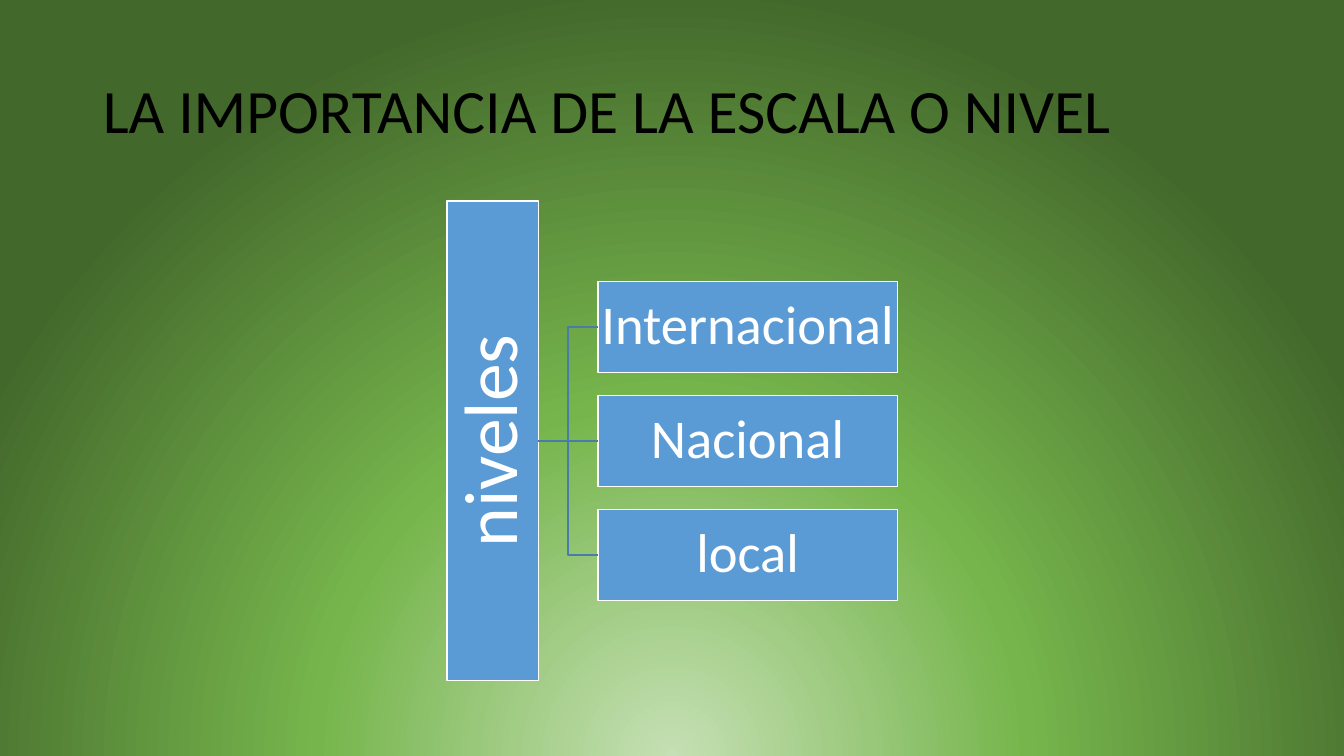
import pptx
import pptx.dml.color
import pptx.enum.shapes
import pptx.enum.text
import pptx.oxml
import pptx.oxml.ns
import pptx.util
from pptx.util import Inches

TITLE = "LA IMPORTANCIA DE LA ESCALA O NIVEL"
ROOT = "niveles"
LEVELS = ["Internacional", "Nacional", "local"]

FONT = "Calibri"
BOX_FILL, BOX_LINE, LINK = "5B9BD5", "FFFFFF", "497CAB"
GRADIENT = [(0, "C5E0B4"), (46, "76B54C"), (100, "43682B")]

CENTER_Y = 4.375
ROOT_LEFT, ROOT_HEIGHT = 4.435, 4.76
LEVEL_LEFT, LEVEL_WIDTH = 5.93, 2.97
THICKNESS, PITCH = 0.905, 1.13


def color(value):
    return pptx.dml.color.RGBColor.from_string(value)


def write(paragraph, text, size, text_color):
    paragraph.line_spacing = 0.9
    run = paragraph.add_run()
    run.text = text
    run.font.name = FONT
    run.font.size = pptx.util.Pt(size)
    run.font.color.rgb = color(text_color)


def paint_background(slide):
    """Fill the background with a radial gradient centred below the slide."""
    slide.background.fill.gradient()
    linear = slide.element.find(".//" + pptx.oxml.ns.qn("a:gradFill"))
    stops = "".join(
        f'<a:gs pos="{percent * 1000}"><a:srgbClr val="{value}"/></a:gs>'
        for percent, value in GRADIENT
    )
    radial = pptx.oxml.parse_xml(
        f'<a:gradFill {pptx.oxml.ns.nsdecls("a")} rotWithShape="1">'
        f'<a:gsLst>{stops}</a:gsLst><a:path path="circle">'
        '<a:fillToRect l="50000" t="130000" r="50000" b="-30000"/>'
        '</a:path></a:gradFill>'
    )
    linear.getparent().replace(linear, radial)


def add_box(slide, text, left, width, height, middle, size, inset):
    box = slide.shapes.add_shape(
        pptx.enum.shapes.MSO_SHAPE.RECTANGLE,
        Inches(left), Inches(middle - height / 2), Inches(width), Inches(height))
    box.shadow.inherit = False
    box.fill.solid()
    box.fill.fore_color.rgb = color(BOX_FILL)
    box.line.color.rgb = color(BOX_LINE)
    box.line.width = pptx.util.Pt(1)
    frame = box.text_frame
    frame.word_wrap = True
    frame.vertical_anchor = pptx.enum.text.MSO_ANCHOR.MIDDLE
    frame.margin_left = frame.margin_right = Inches(inset)
    frame.margin_top = frame.margin_bottom = Inches(inset)
    paragraph = frame.paragraphs[0]
    paragraph.alignment = pptx.enum.text.PP_ALIGN.CENTER
    write(paragraph, text, size, "FFFFFF")
    return box


def link(slide, root, level, kind):
    connector = slide.shapes.add_connector(kind, 0, 0, 0, 0)
    connector.begin_connect(root, 3)
    connector.end_connect(level, 1)
    connector.line.color.rgb = color(LINK)
    connector.line.width = pptx.util.Pt(1)
    properties = connector.element.spPr
    properties.append(properties.makeelement(pptx.oxml.ns.qn("a:effectLst"), {}))


def main():
    presentation = pptx.Presentation()
    presentation.slide_width = Inches(13.33)
    presentation.slide_height = Inches(7.5)
    slide = presentation.slides.add_slide(presentation.slide_layouts[5])
    paint_background(slide)

    title = slide.shapes.title
    title.left, title.top = Inches(0.92), Inches(0.4)
    title.width, title.height = Inches(11.5), Inches(1.45)
    title.text_frame.vertical_anchor = pptx.enum.text.MSO_ANCHOR.MIDDLE
    heading = title.text_frame.paragraphs[0]
    heading.alignment = pptx.enum.text.PP_ALIGN.LEFT
    write(heading, TITLE, 44, "000000")

    root = add_box(slide, ROOT, ROOT_LEFT, THICKNESS, ROOT_HEIGHT, CENTER_Y, 54, 0.04)
    root.text_frame._txBody.bodyPr.set("vert", "vert270")

    connectors = pptx.enum.shapes.MSO_CONNECTOR
    for index, text in enumerate(LEVELS):
        offset = index - (len(LEVELS) - 1) / 2
        level = add_box(slide, text, LEVEL_LEFT, LEVEL_WIDTH, THICKNESS,
                        CENTER_Y + offset * PITCH, 39, 0.03)
        link(slide, root, level, connectors.ELBOW if offset else connectors.STRAIGHT)

    presentation.save("out.pptx")


if __name__ == "__main__":
    main()
